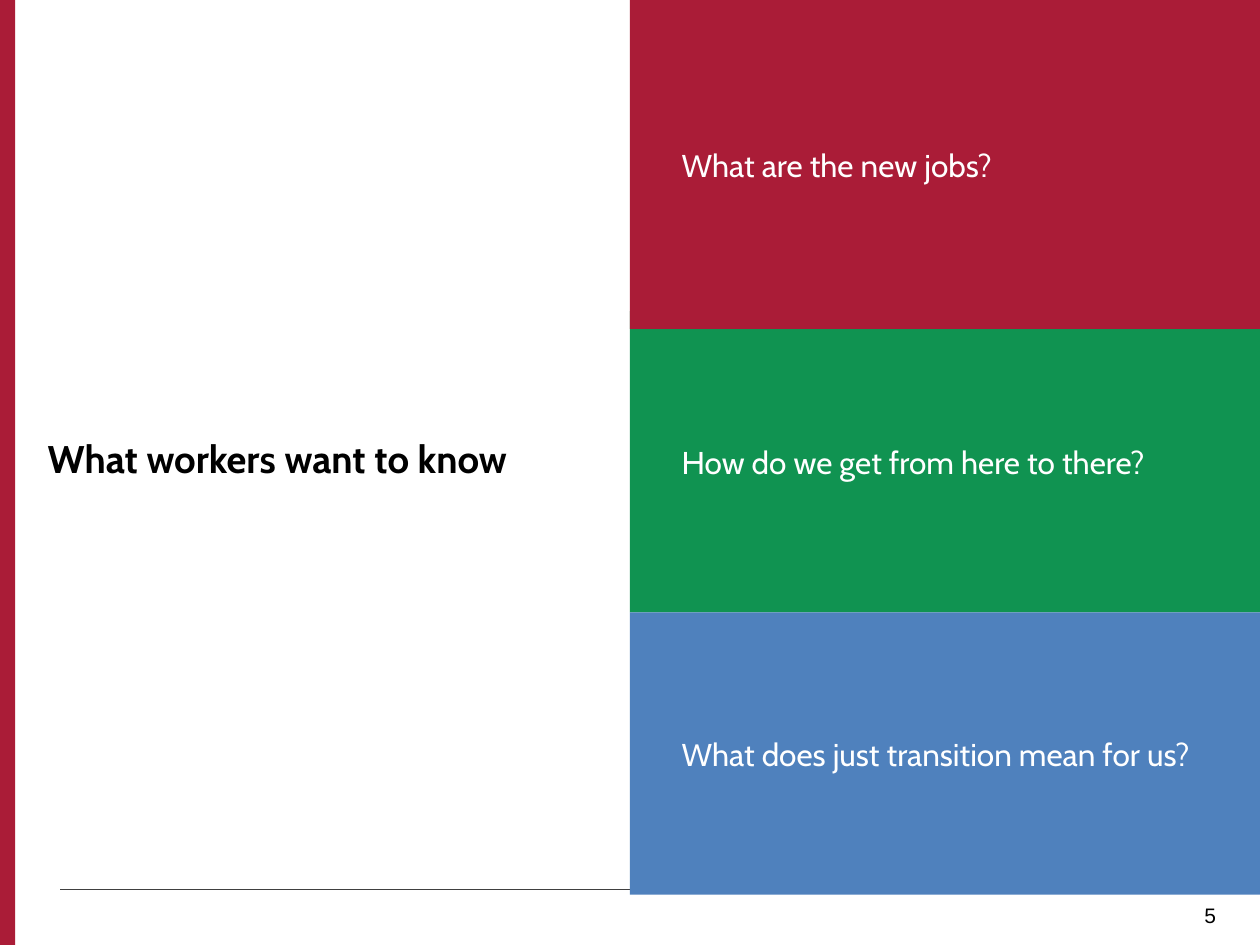
from lxml import etree
from pptx import Presentation
from pptx.dml.color import RGBColor
from pptx.enum.shapes import MSO_CONNECTOR, MSO_SHAPE
from pptx.enum.text import MSO_ANCHOR, PP_ALIGN
from pptx.oxml.ns import qn
from pptx.util import Inches, Pt

RED = RGBColor(0xAA, 0x1C, 0x37)
GREEN = RGBColor(0x10, 0x93, 0x51)
BLUE = RGBColor(0x4F, 0x81, 0xBD)
GREY = RGBColor(0x40, 0x40, 0x40)
BLACK = RGBColor(0, 0, 0)
WHITE = RGBColor(0xFF, 0xFF, 0xFF)

# Back to front: the red panel overlaps the top of the green one.
QUESTIONS = [
    ("How do we get from here to there?", GREEN, 2.47, 2.39),
    ("What does just transition mean for us?", BLUE, 4.86, 2.24),
    ("What are the new jobs?", RED, 0, 2.61),
]


def style_text(paragraph, text, font_name, size, color, bold=False):
    paragraph.text = text
    font = paragraph.font
    font.name = font_name
    font.size = Pt(size)
    font.bold = bold
    font.color.rgb = color


def add_block(slide, left, top, width, height, color):
    block = slide.shapes.add_shape(MSO_SHAPE.RECTANGLE, left, top, width, height)
    block.shadow.inherit = False
    block.fill.solid()
    block.fill.fore_color.rgb = color
    block.line.fill.background()
    return block


def add_label(slide, left, top, width, height):
    """Add a wrapping text box and return its first paragraph."""
    frame = slide.shapes.add_textbox(left, top, width, height).text_frame
    frame.word_wrap = True
    return frame.paragraphs[0]


def add_footer(slide, left, top, width, number):
    rule = slide.shapes.add_connector(
        MSO_CONNECTOR.STRAIGHT, left, top, left + width, top)
    rule.line.color.rgb = GREY
    rule.line.width = Pt(0.5)
    etree.SubElement(rule._element.spPr, qn("a:effectLst"))

    page = add_label(slide, left + Inches(6.94), top + Inches(0.05),
                     Inches(2.33), Inches(0.39))
    page.alignment = PP_ALIGN.RIGHT
    style_text(page, number, "Arial", 12, BLACK)


def add_title(slide, left, top, width, height):
    title = add_label(slide, left, top, width, height)
    style_text(title, "What workers want to know", "Cabin", 22, BLACK, bold=True)


def add_question(slide, left, top, width, height, question, color):
    frame = add_block(slide, left, top, width, height, color).text_frame
    frame.word_wrap = True
    frame.vertical_anchor = MSO_ANCHOR.MIDDLE
    frame.margin_left = Inches(0.41)
    paragraph = frame.paragraphs[0]
    paragraph.alignment = PP_ALIGN.LEFT
    style_text(paragraph, question, "Cabin", 18, WHITE)


def main():
    prs = Presentation()
    prs.slide_width = Inches(10)
    prs.slide_height = Inches(7.5)
    slide = prs.slides.add_slide(prs.slide_layouts[6])

    add_footer(slide, Inches(0.48), Inches(7.06), Inches(9.17), "5")
    add_block(slide, 0, 0, Inches(0.12), prs.slide_height, RED)
    add_title(slide, Inches(0.28), Inches(3.4), Inches(4.49), Inches(0.69))
    for question, color, top, height in QUESTIONS:
        add_question(slide, Inches(5), Inches(top), Inches(5), Inches(height),
                     question, color)

    prs.save("out.pptx")


if __name__ == "__main__":
    main()
